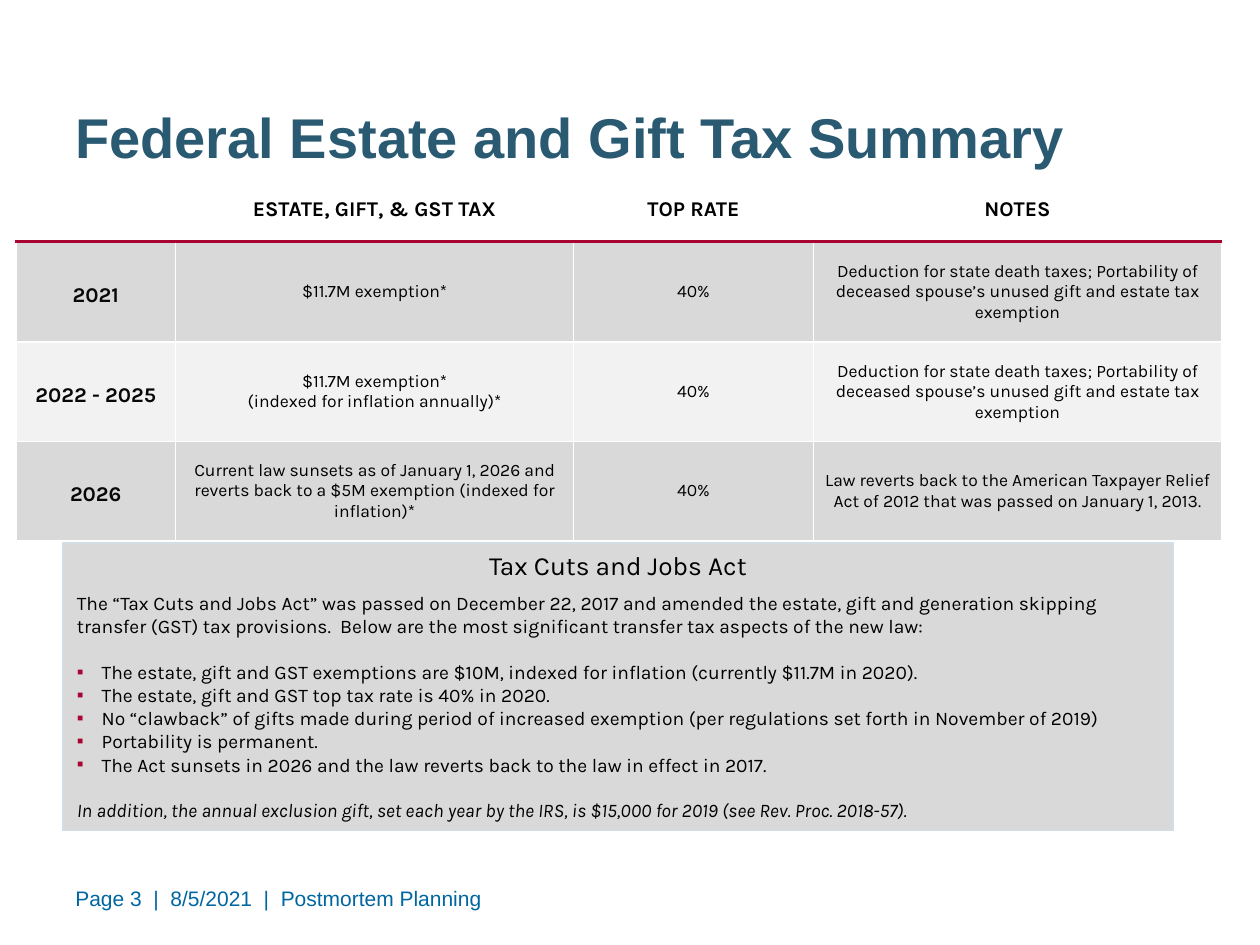
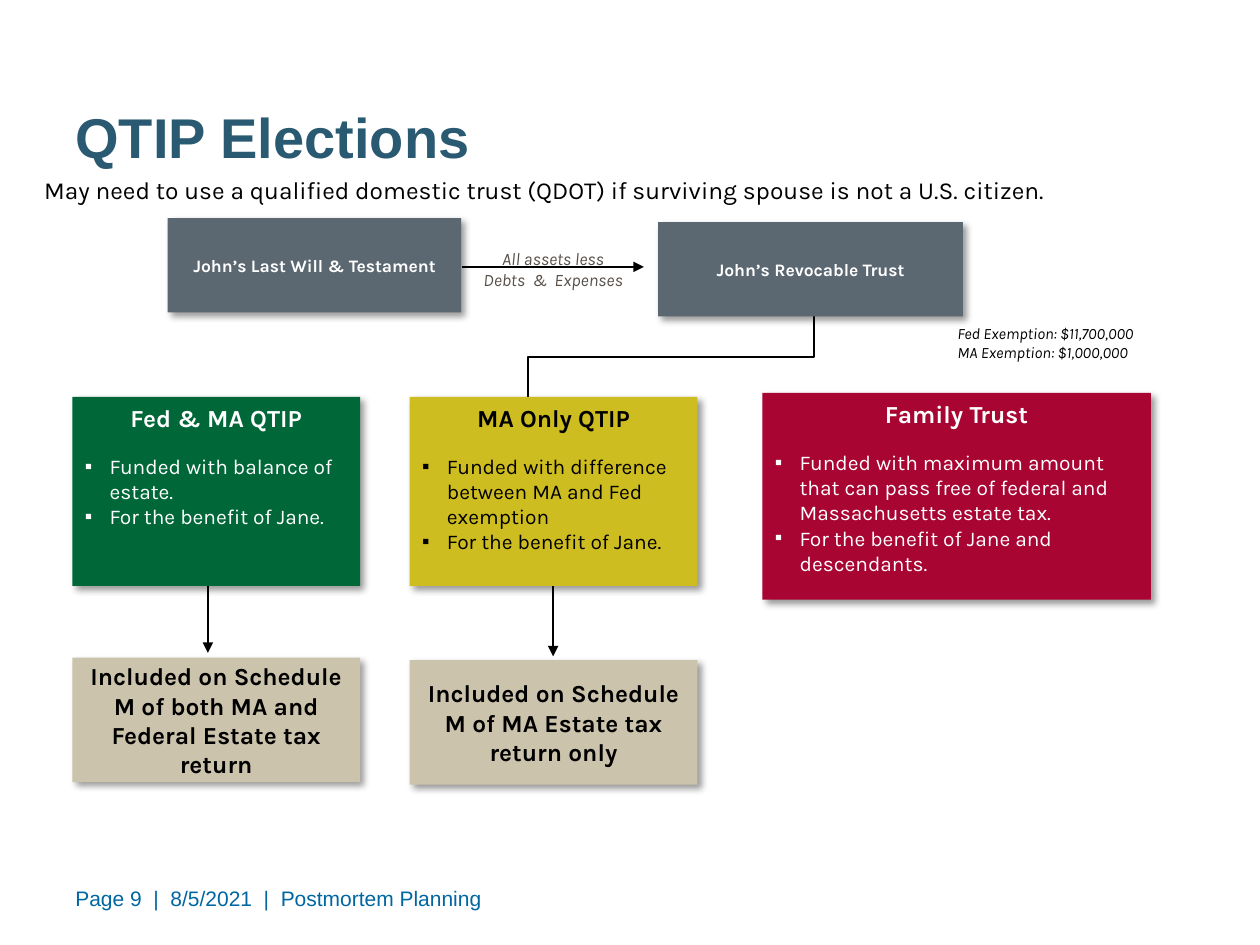
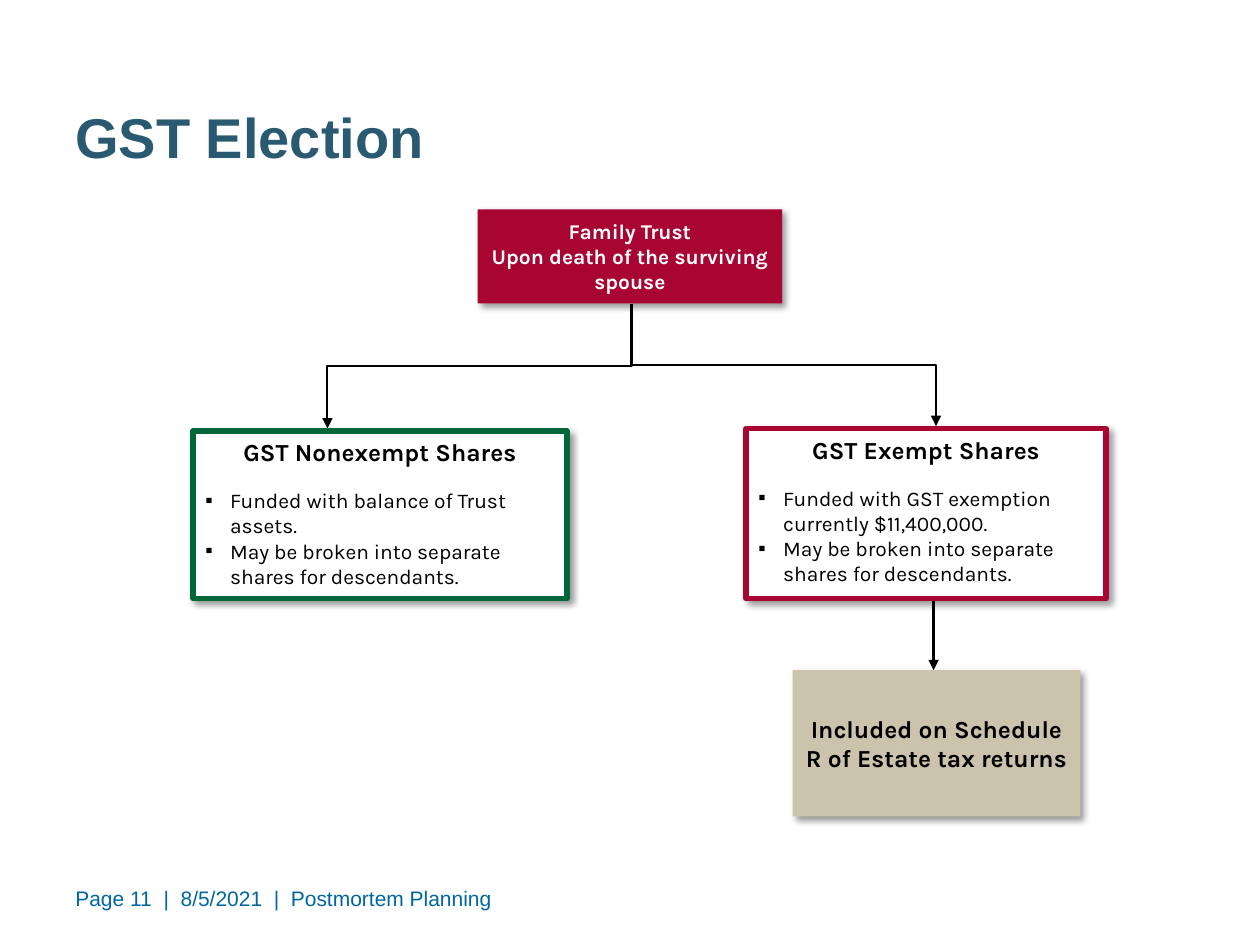
from dataclasses import dataclass

from pptx import Presentation
from pptx.dml.color import RGBColor
from pptx.enum.shapes import MSO_CONNECTOR, MSO_SHAPE
from pptx.enum.text import MSO_ANCHOR, PP_ALIGN
from pptx.oxml import parse_xml
from pptx.oxml.ns import nsdecls, qn
from pptx.util import Cm, Pt


@dataclass(frozen=True)
class Theme:
    head_font: str = "Arial"
    body_font: str = "Karla"
    title: str = "2A5972"
    footer: str = "0066A1"
    black: str = "000000"
    ink: str = "080808"
    white: str = "FFFFFF"
    gray: str = "D9D9D9"
    pale: str = "F2F2F2"
    edge: str = "D3DDE4"
    slate: str = "5B6871"
    brown: str = "584F48"
    green: str = "006838"
    yellow: str = "CEBD20"
    red: str = "A80532"
    tan: str = "CCC3AC"
    title_size: float = 32
    act_size: float = 15
    head_size: float = 14
    body_size: float = 12
    act_body_size: float = 11
    small_size: float = 10
    note_size: float = 9


T = Theme()
CENTER = PP_ALIGN.CENTER


def write(tf, text, size=T.body_size, color=T.black, font=T.body_font, bold=False,
          italic=False, align=PP_ALIGN.LEFT, before=0, spacing=None, bullet=None):
    tf.word_wrap = True
    p = tf.add_paragraph() if tf.text else tf.paragraphs[0]
    p.alignment = align
    if before:
        p.space_before = Pt(before)
    if spacing:
        p.line_spacing = spacing
    if bullet:
        pPr = p._p.get_or_add_pPr()
        pPr.set("marL", str(Cm(0.5)))
        pPr.set("indent", str(-Cm(0.5)))
        for xml in (f'<a:buClr {nsdecls("a")}><a:srgbClr val="{bullet}"/></a:buClr>',
                    f'<a:buFont {nsdecls("a")} typeface="Arial"/>',
                    f'<a:buChar {nsdecls("a")} char="▪"/>'):
            pPr.append(parse_xml(xml))
    r = p.add_run()
    r.text = text
    r.font.name = font
    r.font.size = Pt(size)
    r.font.bold = bold
    r.font.italic = italic
    r.font.color.rgb = RGBColor.from_string(color)


prs = Presentation()
prs.slide_width, prs.slide_height = Cm(25.4), Cm(19.05)

for page, title in ((3, "Federal Estate and Gift Tax Summary"),
                    (9, "QTIP Elections"), (11, "GST Election")):
    s = prs.slides.add_slide(prs.slide_layouts[6])
    tf = s.shapes.add_textbox(Cm(1.27), Cm(17.73), Cm(15.44), Cm(0.76)).text_frame
    write(tf, f"Page {page}  |  8/5/2021  |  Postmortem Planning",
          color=T.footer, font=T.head_font)
    tf = s.shapes.add_textbox(Cm(1.27), Cm(1.57), Cm(22.86), Cm(2.36)).text_frame
    tf.vertical_anchor = MSO_ANCHOR.MIDDLE
    write(tf, title, size=T.title_size, color=T.title, font=T.head_font, bold=True)

summary, qtip, gst = prs.slides

sp = summary.shapes.add_shape(MSO_SHAPE.RECTANGLE, Cm(1.27), Cm(10.95), Cm(22.38), Cm(5.79))
sp.shadow.inherit = False
sp.fill.solid()
sp.fill.fore_color.rgb = RGBColor.from_string(T.gray)
sp.line.color.rgb = RGBColor.from_string(T.edge)
sp.line.width = Pt(0.75)
tf = sp.text_frame
tf.vertical_anchor = MSO_ANCHOR.TOP
tf.margin_left = tf.margin_right = Cm(0.28)
write(tf, "Tax Cuts and Jobs Act", size=T.act_size, align=CENTER)
write(tf, "The “Tax Cuts and Jobs Act” was passed on December 22, 2017 and amended the estate, "
      "gift and generation skipping transfer (GST) tax provisions.  Below are the most "
      "significant transfer tax aspects of the new law:", size=T.act_body_size, before=6)
for i, text in enumerate((
        "The estate, gift and GST exemptions are $10M, indexed for inflation "
        "(currently $11.7M in 2020).",
        "The estate, gift and GST top tax rate is 40% in 2020.",
        "No “clawback” of gifts made during period of increased exemption "
        "(per regulations set forth in November of 2019)",
        "Portability is permanent.",
        "The Act sunsets in 2026 and the law reverts back to the law in effect in 2017.")):
    write(tf, text, size=T.act_body_size, bullet=T.red, before=0 if i else 13)
write(tf, "In addition, the annual exclusion gift, set each year by the IRS, is $15,000 for 2019 "
      "(see Rev. Proc. 2018-57).", size=T.act_body_size, italic=True, before=13)

deduction = ("Deduction for state death taxes; Portability of deceased spouse’s "
             "unused gift and estate tax exemption")
rows = [
    ("", "ESTATE, GIFT, & GST TAX", "TOP RATE", "NOTES"),
    ("2021", "$11.7M exemption*", "40%", deduction),
    ("2022 - 2025", "$11.7M exemption*\n(indexed for inflation annually)*", "40%", deduction),
    ("2026", "Current law sunsets as of January 1, 2026 and reverts back to a $5M exemption "
     "(indexed for inflation)*", "40%",
     "Law reverts back to the American Taxpayer Relief Act of 2012 that was passed on "
     "January 1, 2013."),
]
col_widths = (3.22, 8.02, 4.84, 8.22)
row_heights = (1.29, 2.03, 2, 2)
table = summary.shapes.add_table(4, 4, Cm(0.32), Cm(3.58), Cm(sum(col_widths)),
                                 Cm(sum(row_heights))).table
table.horz_banding = table.first_row = False
for column, width in zip(table.columns, col_widths):
    column.width = Cm(width)
for i, row in enumerate(rows):
    table.rows[i].height = Cm(row_heights[i])
    for j, text in enumerate(row):
        cell = table.cell(i, j)
        cell.vertical_anchor = MSO_ANCHOR.MIDDLE
        cell.fill.solid()
        cell.fill.fore_color.rgb = RGBColor.from_string((T.white, T.gray, T.pale, T.gray)[i])
        if j:
            cell.margin_left = cell.margin_right = Cm(0.15)
            cell.margin_top = cell.margin_bottom = 0
        for line in text.split("\n") if text else ():
            if i == 0:
                write(cell.text_frame, line, bold=True, align=CENTER)
            elif j == 0:
                write(cell.text_frame, line, color=T.ink, bold=True, align=CENTER,
                      spacing=Pt(18))
            else:
                write(cell.text_frame, line, size=T.small_size, align=CENTER)
        tcPr = cell._tc.get_or_add_tcPr()
        for k, side in enumerate("LRTB"):
            ruled = (i, side) in ((0, "B"), (1, "T"))
            color, width = (T.red, 1.5) if ruled else (T.white, 1)
            tcPr.insert(k, parse_xml(
                f'<a:ln{side} {nsdecls("a")} w="{Pt(width)}"><a:solidFill>'
                f'<a:srgbClr val="{color}"/></a:solidFill></a:ln{side}>'))

connectors = [
    (qtip, 9.32, 5.38, 12.98, 5.38, True),
    (qtip, 16.41, 6.38, 10.64, 8, False),
    (qtip, 4.19, 11.81, 4.19, 13.16, True),
    (qtip, 11.15, 11.81, 11.15, 13.23, True),
    (gst, 12.73, 6.12, 18.87, 8.59, True),
    (gst, 12.73, 6.12, 6.6, 8.64, True),
    (gst, 18.82, 12.07, 18.82, 13.51, True),
]
for s, x1, y1, x2, y2, arrow in connectors:
    bent = x1 != x2 and y1 != y2
    if bent:
        cx, cy = (x1 + x2) / 2, (y1 + y2) / 2
        turn = 1 if x2 < x1 else -1
        half_w, half_h = turn * (y2 - y1) / 2, abs(x2 - x1) / 2
        c = s.shapes.add_connector(MSO_CONNECTOR.ELBOW, Cm(cx - half_w), Cm(cy - half_h),
                                   Cm(cx + half_w), Cm(cy + half_h))
        c._element.spPr.find(qn("a:xfrm")).set("rot", str(turn * 90 % 360 * 60000))
    else:
        c = s.shapes.add_connector(MSO_CONNECTOR.STRAIGHT, Cm(x1), Cm(y1), Cm(x2), Cm(y2))
    c.line.color.rgb = RGBColor.from_string(T.black)
    c.line.width = Pt(1.25 if bent else 1.5)
    if arrow:
        c.line._get_or_add_ln().append(
            parse_xml(f'<a:tailEnd {nsdecls("a")} type="triangle"/>'))
    c._element.spPr.append(parse_xml(f'<a:effectLst {nsdecls("a")}/>'))

labels = [
    (0.64, 3.48, 22.86, 0.94,
     ["May need to use a qualified domestic trust (QDOT) if surviving spouse is not a "
      "U.S. citizen."], dict(size=T.head_size, spacing=0.9)),
    (9.32, 4.88, 3.66, 1.12, ["All assets less", "Debts  &  Expenses"],
     dict(size=T.small_size, color=T.brown, italic=True, align=CENTER)),
    (19.05, 6.4, 5.08, 1.02, ["Fed Exemption: $11,700,000", "MA Exemption: $1,000,000"],
     dict(size=T.note_size, italic=True)),
]
for x, y, w, h, lines, fmt in labels:
    tf = qtip.shapes.add_textbox(Cm(x), Cm(y), Cm(w), Cm(h)).text_frame
    for line in lines:
        write(tf, line, **fmt)

jane = "For the benefit of Jane."
shares = "May be broken into separate shares for descendants."
boxes = [
    (qtip, 3.38, 4.4, 5.92, 1.9, T.slate, None, T.white, T.small_size,
     ["John’s Last Will & Testament"], []),
    (qtip, 13.27, 4.48, 6.14, 1.9, T.slate, None, T.white, T.small_size,
     ["John’s Revocable Trust"], []),
    (qtip, 1.46, 8, 5.8, 3.81, T.green, None, T.white, T.head_size,
     ["Fed & MA QTIP"], ["Funded with balance of estate.", jane]),
    (qtip, 8.26, 8, 5.8, 3.81, T.yellow, None, T.black, T.head_size,
     ["MA Only QTIP"], ["Funded with difference between MA and Fed exemption", jane]),
    (qtip, 15.37, 7.92, 7.83, 4.17, T.red, None, T.white, T.head_size, ["Family Trust"],
     ["Funded with maximum amount that can pass free of federal and Massachusetts estate tax.",
      "For the benefit of Jane and descendants."]),
    (qtip, 1.46, 13.26, 5.8, 2.51, T.tan, None, T.black, T.head_size,
     ["Included on Schedule M of both MA and Federal Estate tax return"], []),
    (qtip, 8.26, 13.31, 5.8, 2.51, T.tan, None, T.black, T.head_size,
     ["Included on Schedule M of MA Estate tax return only"], []),
    (gst, 9.63, 4.22, 6.14, 1.9, T.red, None, T.white, T.body_size,
     ["Family Trust", "Upon death of the surviving spouse"], []),
    (gst, 3.89, 8.69, 7.54, 3.38, T.white, T.green, T.black, T.head_size,
     ["GST Nonexempt Shares"], ["Funded with balance of Trust assets.", shares]),
    (gst, 15.04, 8.64, 7.26, 3.43, T.white, T.red, T.black, T.head_size,
     ["GST Exempt Shares"], ["Funded with GST exemption currently $11,400,000.", shares]),
    (gst, 15.98, 13.51, 5.8, 2.95, T.tan, None, T.black, T.head_size,
     ["Included on Schedule R of Estate tax returns"], []),
]
for s, x, y, w, h, fill, border, color, size, heads, bullets in boxes:
    sp = s.shapes.add_shape(MSO_SHAPE.RECTANGLE, Cm(x), Cm(y), Cm(w), Cm(h))
    sp.fill.solid()
    sp.fill.fore_color.rgb = RGBColor.from_string(fill)
    if border:
        sp.line.color.rgb = RGBColor.from_string(border)
        sp.line.width = Pt(3)
    else:
        sp.line.fill.background()
    sp.shadow.inherit = False
    sp._element.spPr.find(qn("a:effectLst")).append(parse_xml(
        f'<a:outerShdw {nsdecls("a")} blurRad="{Pt(4)}" dist="{Pt(3)}" dir="2700000" '
        f'algn="tl" rotWithShape="0"><a:srgbClr val="{T.black}"><a:alpha val="40000"/>'
        f'</a:srgbClr></a:outerShdw>'))
    tf = sp.text_frame
    tf.vertical_anchor = MSO_ANCHOR.TOP if bullets else MSO_ANCHOR.MIDDLE
    for head in heads:
        write(tf, head, size=size, color=color, bold=True, align=CENTER)
    for i, text in enumerate(bullets):
        write(tf, text, color=color, bullet=color, before=0 if i else 12)

prs.save("out.pptx")
